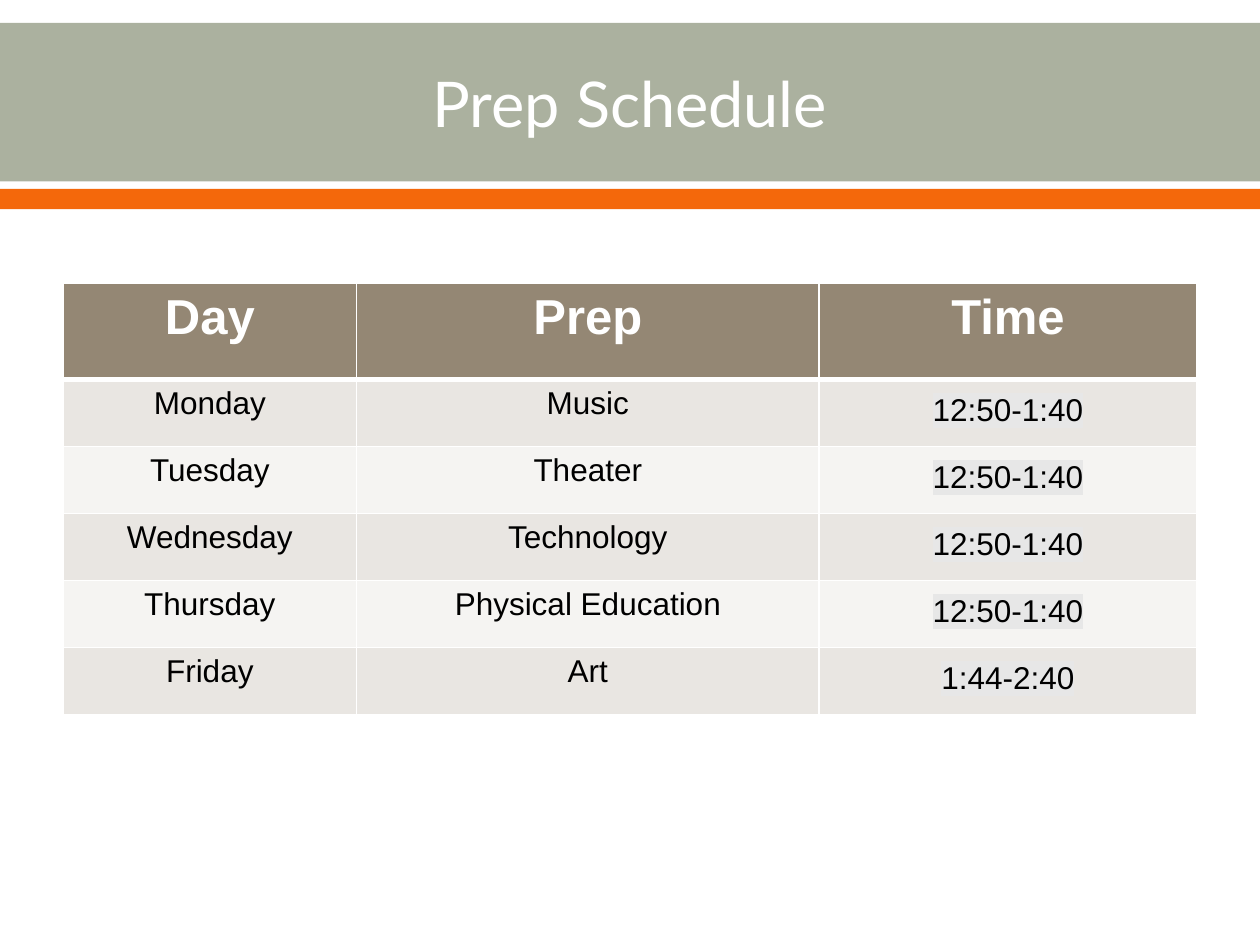
from lxml.etree import SubElement
from pptx import Presentation
from pptx.dml.color import RGBColor
from pptx.enum.shapes import MSO_SHAPE as Shape
from pptx.enum.text import MSO_ANCHOR as Anchor, PP_ALIGN as Align
from pptx.oxml import parse_xml
from pptx.oxml.ns import qn
from pptx.util import Cm, Pt

COLORS = {
    "sage": "ABB19F",
    "orange": "F4680B",
    "white": "FFFFFF",
    "black": "000000",
    "header": "948774",
    "odd_row": "E9E6E2",
    "even_row": "F5F4F2",
    "highlight": "E7E7E7",
}
HEADINGS = ("Day", "Prep", "Time")
SCHEDULE = (
    ("Monday", "Music", "12:50-1:40"),
    ("Tuesday", "Theater", "12:50-1:40"),
    ("Wednesday", "Technology", "12:50-1:40"),
    ("Thursday", "Physical Education", "12:50-1:40"),
    ("Friday", "Art", "1:44-2:40"),
)
COLUMN_WIDTHS = (5.92, 9.32, 7.62)
HEADER_HEIGHT, DAY_HEIGHT = 1.93, 1.35
TIME_COLUMN = HEADINGS.index("Time")


def rgb(name):
    """Return the named palette colour."""
    return RGBColor.from_string(COLORS[name])


def style_text(paragraph, font_name, size, color, bold=False):
    """Centre a paragraph and format its runs."""
    paragraph.alignment = Align.CENTER
    for run in paragraph.runs:
        run.font.name = font_name
        run.font.size = Pt(size)
        run.font.bold = bold
        run.font.color.rgb = rgb(color)


def highlight(run):
    """Put the highlight colour behind a run."""
    mark = parse_xml(
        '<a:highlight xmlns:a="http://schemas.openxmlformats.org/drawingml/2006/main">'
        f'<a:srgbClr val="{COLORS["highlight"]}"/></a:highlight>'
    )
    run.font.fill
    run._r.rPr.find(qn("a:latin")).addprevious(mark)


def set_borders(cell, widths):
    """Draw white borders of the given point widths around a cell."""
    properties = cell._tc.get_or_add_tcPr()
    for side, width in widths.items():
        line = SubElement(properties, qn(f"a:ln{side}"), w=str(Pt(width)))
        fill = SubElement(line, qn("a:solidFill"))
        SubElement(fill, qn("a:srgbClr"), val=COLORS["white"])


def add_banner(slide, left, top, width):
    """Place the title over a sage band with an orange stripe below."""
    title = slide.shapes.title
    for color, offset, height in (("sage", 0, 3.2), ("orange", 3.35, 0.41)):
        band = slide.shapes.add_shape(
            Shape.RECTANGLE, Cm(left), Cm(top + offset), Cm(width), Cm(height)
        )
        band.shadow.inherit = False
        band.fill.solid()
        band.fill.fore_color.rgb = rgb(color)
        band.line.fill.background()
        title.element.addprevious(band.element)

    title.left, title.top = Cm(left + 1.27), Cm(top + 0.05)
    title.width, title.height = Cm(width - 2.54), Cm(3.1)
    title.text_frame.text = "Prep Schedule"
    title.text_frame.vertical_anchor = Anchor.MIDDLE
    style_text(title.text_frame.paragraphs[0], "Lato", 36, "white")


def add_schedule(slide, left, top):
    """Place the table of days, preps and times."""
    rows = (HEADINGS, *SCHEDULE)
    heights = [HEADER_HEIGHT] + [DAY_HEIGHT] * len(SCHEDULE)
    table = slide.shapes.add_table(
        len(rows), len(HEADINGS), Cm(left), Cm(top),
        Cm(sum(COLUMN_WIDTHS)), Cm(sum(heights)),
    ).table
    for column, width in zip(table.columns, COLUMN_WIDTHS):
        column.width = Cm(width)
    for row, height in zip(table.rows, heights):
        row.height = Cm(height)

    for r, texts in enumerate(rows):
        is_header = r == 0
        row_color = "header" if is_header else "odd_row" if r % 2 else "even_row"
        borders = {"L": 1, "R": 1, "T": 3 if r == 1 else 1, "B": 3 if is_header else 1}
        for c, text in enumerate(texts):
            cell = table.cell(r, c)
            set_borders(cell, borders)
            cell.fill.solid()
            cell.fill.fore_color.rgb = rgb(row_color)
            cell.text_frame.text = text
            paragraph = cell.text_frame.paragraphs[0]
            if is_header:
                style_text(paragraph, "Arial", 28, "white", bold=True)
            else:
                style_text(paragraph, "Arial", 18, "black")
            if c == TIME_COLUMN and not is_header:
                paragraph.line_spacing = 1.2
                highlight(paragraph.runs[0])


def main():
    """Build and save the slide."""
    deck = Presentation()
    deck.slide_width, deck.slide_height = Cm(25.4), Cm(19.05)
    slide = deck.slides.add_slide(deck.slide_layouts[5])
    add_banner(slide, 0, 0.46, 25.4)
    add_schedule(slide, 1.27, 5.72)
    deck.save("out.pptx")


if __name__ == "__main__":
    main()
